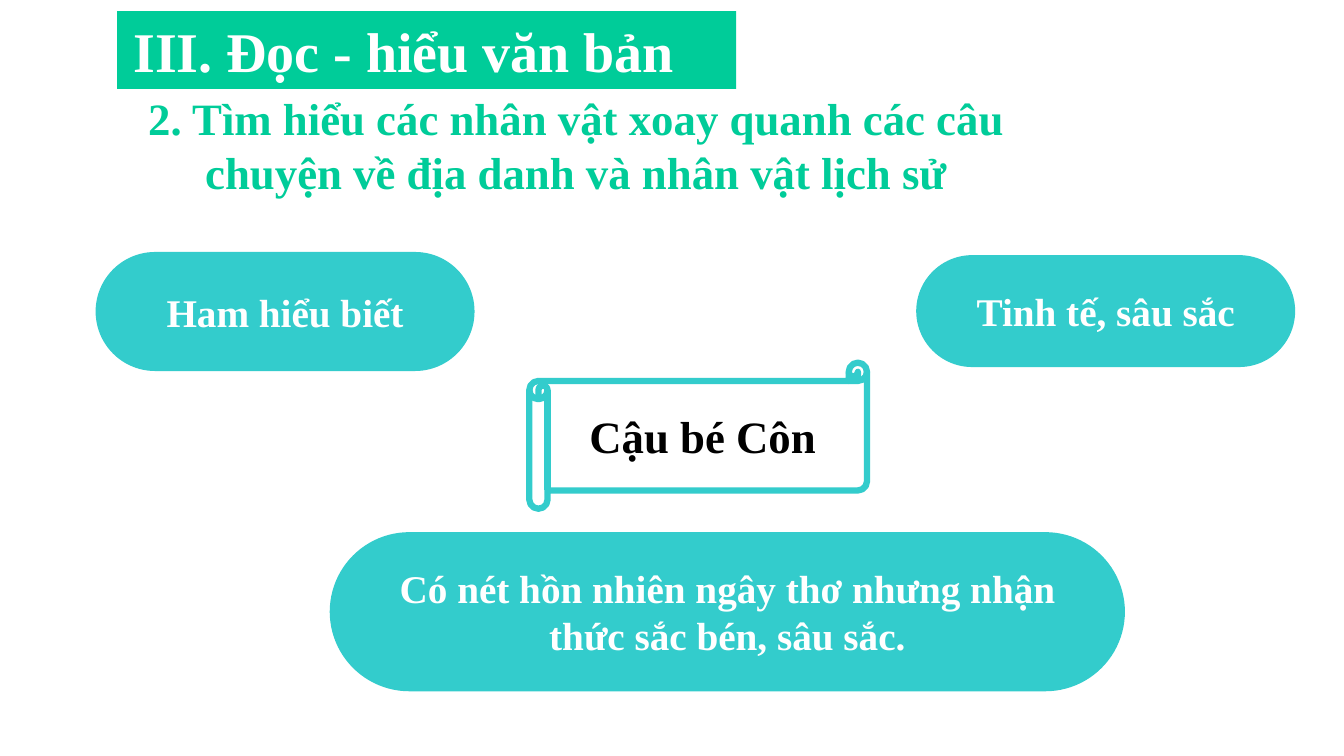
from pptx import Presentation
from pptx.dml.color import RGBColor
from pptx.enum.shapes import MSO_SHAPE
from pptx.enum.text import MSO_ANCHOR, MSO_AUTO_SIZE, PP_ALIGN
from pptx.util import Cm, Pt

PILL = MSO_SHAPE.ROUNDED_RECTANGLE
SCROLL = MSO_SHAPE.HORIZONTAL_SCROLL
TOP, MIDDLE = MSO_ANCHOR.TOP, MSO_ANCHOR.MIDDLE
CENTER, JUSTIFY = PP_ALIGN.CENTER, PP_ALIGN.JUSTIFY
NO_FIT = MSO_AUTO_SIZE.NONE
TITLE_ONLY = 5

PILLS = [
    ("Ham hiểu biết", (2.41, 6.35, 9.55, 3.0)),
    ("Tinh tế, sâu sắc", (23.09, 6.43, 9.55, 2.82)),
    ("Có nét hồn nhiên ngây thơ nhưng nhận thức sắc bén, sâu sắc.",
     (8.31, 13.41, 20.04, 4.01)),
]


def color(hex_value):
    return RGBColor.from_string(hex_value)


class SlideBuilder:
    """Holds the deck style and the slide being built."""

    font = "Times New Roman"
    green, teal, white, black = "00CC99", "33CCCC", "FFFFFF", "000000"

    def __init__(self, prs):
        self.s = prs.slides.add_slide(prs.slide_layouts[TITLE_ONLY])

    def set_text(self, sp, text, size, ink, align=CENTER, anchor=MIDDLE):
        tf = sp.text_frame
        tf.word_wrap = True
        tf.auto_size = NO_FIT
        tf.vertical_anchor = anchor
        p = tf.paragraphs[0]
        p.alignment = align
        r = p.add_run()
        r.text = text
        r.font.name = self.font
        r.font.size = Pt(size)
        r.font.bold = True
        r.font.color.rgb = color(ink)

    def title(self, text, box):
        sp = self.s.shapes.title
        sp.left, sp.top, sp.width, sp.height = map(Cm, box)
        sp.fill.solid()
        sp.fill.fore_color.rgb = color(self.green)
        self.set_text(sp, text, 40, self.white, JUSTIFY, TOP)
        sp.text_frame.margin_left = Cm(0.41)

    def subtitle(self, text, box):
        sp = self.s.shapes.add_textbox(*map(Cm, box))
        self.set_text(sp, text, 32, self.green, anchor=TOP)

    def scroll(self, text, box):
        sp = self.s.shapes.add_shape(SCROLL, *map(Cm, box))
        sp.shadow.inherit = False
        sp.fill.background()
        sp.line.color.rgb = color(self.teal)
        sp.line.width = Pt(4.5)
        self.set_text(sp, text, 32, self.black)

    def pill(self, text, box):
        sp = self.s.shapes.add_shape(PILL, *map(Cm, box))
        sp.shadow.inherit = False
        sp.adjustments[0] = 0.5
        sp.fill.solid()
        sp.fill.fore_color.rgb = color(self.teal)
        sp.line.fill.background()
        self.set_text(sp, text, 28, self.white)


def main():
    prs = Presentation()
    prs.slide_width, prs.slide_height = Cm(33.87), Cm(19.05)
    slide = SlideBuilder(prs)
    slide.title("III. Đọc - hiểu văn bản", (2.95, 0.28, 15.6, 1.96))
    slide.subtitle("2. Tìm hiểu các nhân vật xoay quanh các câu chuyện "
                   "về địa danh và nhân vật lịch sử", (2.41, 2.16, 24.23, 3.0))
    slide.scroll("Cậu bé Côn", (13.34, 9.14, 8.51, 3.68))
    for text, box in PILLS:
        slide.pill(text, box)
    prs.save("out.pptx")


if __name__ == "__main__":
    main()
